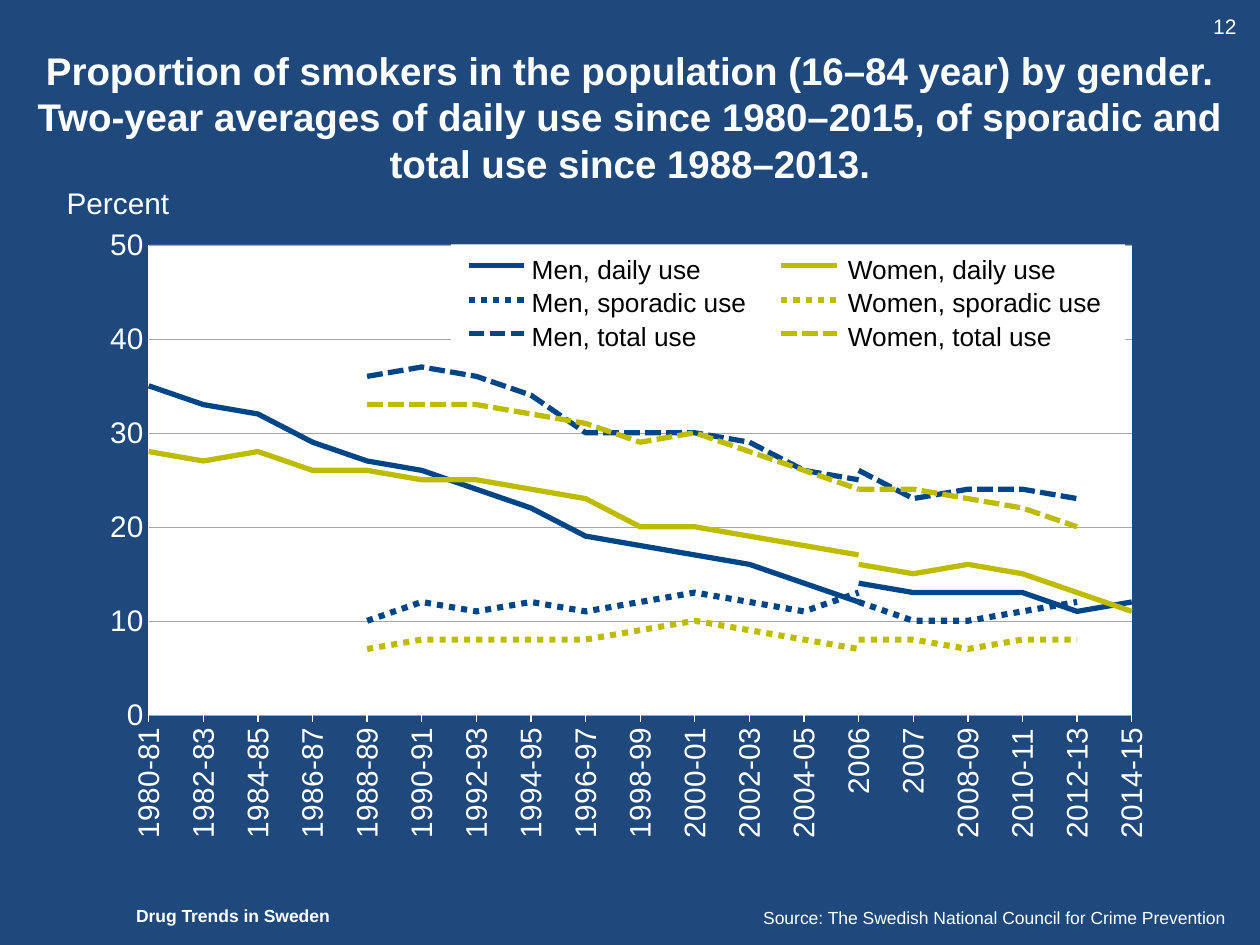
from dataclasses import dataclass

from lxml.etree import SubElement
from pptx import Presentation
from pptx.chart.data import CategoryChartData as ChartData
from pptx.dml.color import RGBColor as Color
from pptx.enum.chart import XL_CHART_TYPE as ChartType, XL_TICK_MARK as TickMark
from pptx.enum.dml import MSO_LINE_DASH_STYLE as Dash
from pptx.enum.shapes import MSO_CONNECTOR as Connector, MSO_SHAPE as Shape
from pptx.enum.text import MSO_ANCHOR as Anchor, MSO_AUTO_SIZE as AutoSize, PP_ALIGN as Align
from pptx.oxml import parse_xml
from pptx.oxml.ns import nsdecls, qn
from pptx.util import Inches, Pt


@dataclass(frozen=True)
class Theme:
    """Colours, font and type sizes of the slide."""
    back: Color = Color.from_string("1F497D")
    light: Color = Color.from_string("FFFFFF")
    dark: Color = Color.from_string("000000")
    grid: Color = Color.from_string("A6A6A6")
    men: Color = Color.from_string("004687")
    women: Color = Color.from_string("BEBC00")
    font: str = "Arial"
    title: float = 22
    label: float = 17
    key: float = 15
    number: float = 12
    small: float = 10


THEME = Theme()
WIDTH, HEIGHT = Inches(10), Inches(7.5)
STYLES = {"daily": (3, None), "sporadic": (3.5, Dash.ROUND_DOT), "total": (3, Dash.SQUARE_DOT)}
COLOURS = {"Men": THEME.men, "Women": THEME.women}
PERIODS = ["1980-81", "1982-83", "1984-85", "1986-87", "1988-89", "1990-91", "1992-93",
           "1994-95", "1996-97", "1998-99", "2000-01", "2002-03", "2004-05", "2006", "2007",
           "2008-09", "2010-11", "2012-13", "2014-15"]
BREAK = PERIODS.index("2006")
SMOKERS = [
    ("Men", "daily", [35, 33, 32, 29, 27, 26, 24, 22, 19, 18, 17, 16, 14, 12],
     [14, 13, 13, 13, 11, 12]),
    ("Men", "total", [36, 37, 36, 34, 30, 30, 30, 29, 26, 25], [26, 23, 24, 24, 23]),
    ("Men", "sporadic", [10, 12, 11, 12, 11, 12, 13, 12, 11, 13], [12, 10, 10, 11, 12]),
    ("Women", "daily", [28, 27, 28, 26, 26, 25, 25, 24, 23, 20, 20, 19, 18, 17],
     [16, 15, 16, 15, 13, 11]),
    ("Women", "total", [33, 33, 33, 32, 31, 29, 30, 28, 26, 24], [24, 24, 23, 22, 20]),
    ("Women", "sporadic", [7, 8, 8, 8, 8, 9, 10, 9, 8, 7], [8, 8, 7, 8, 8]),
]


def place(left, top, width, height):
    """Turn percentages of the slide into lengths."""
    return [round(share * side / 100) for share, side in
            zip((left, top, width, height), (WIDTH, HEIGHT, WIDTH, HEIGHT))]


def set_font(font, size, color=THEME.light, bold=False):
    """Apply the theme font."""
    font.name, font.size, font.bold = THEME.font, Pt(size), bold
    font.color.rgb = color


def set_line(line, color, width, dash=None):
    """Colour a line and set its width and dash."""
    line.color.rgb, line.width = color, Pt(width)
    if dash:
        line.dash_style = dash


def add_label(page, area, text, size, bold=False, align=Align.LEFT, wrap=True):
    """Add one line of light text and return its frame."""
    frame = page.shapes.add_textbox(*place(*area)).text_frame
    frame.word_wrap = wrap
    frame.auto_size = AutoSize.SHAPE_TO_FIT_TEXT
    para = frame.paragraphs[0]
    para.text, para.alignment = text, align
    set_font(para.font, size, bold=bold)
    return frame


def add_title(page, text):
    """Move and fill the title placeholder."""
    title = page.shapes.title
    title.left, title.top, title.width, title.height = place(0, 4, 100, 16.67)
    title.text_frame.vertical_anchor = Anchor.MIDDLE
    title.text_frame.word_wrap = True
    para = title.text_frame.paragraphs[0]
    para.text, para.alignment = text, Align.CENTER
    set_font(para.font, THEME.title, bold=True)


def pad(start, values):
    """Fill a run of values with gaps to cover all periods."""
    return [None] * start + values + [None] * (len(PERIODS) - start - len(values))


def style_axes(chart):
    """Format the period and percent axes."""
    periods, percent = chart.category_axis, chart.value_axis
    for axis, width in ((periods, 0.75), (percent, 0.25)):
        set_font(axis.tick_labels.font, THEME.label)
        set_line(axis.format.line, THEME.light, width)
        axis.minor_tick_mark = TickMark.NONE
    periods.major_tick_mark = TickMark.OUTSIDE
    percent.major_tick_mark = TickMark.NONE
    percent.minimum_scale, percent.maximum_scale, percent.major_unit = 0, 50, 10
    percent.tick_labels.number_format = "###0"
    percent.tick_labels.number_format_is_linked = False
    set_line(percent.major_gridlines.format.line, THEME.grid, 0.25)
    turned = periods._element.find(f"{qn('c:txPr')}/{qn('a:bodyPr')}")
    turned.set("rot", "-5400000")
    turned.set("vert", "horz")
    for old in percent._element.findall(qn("c:crossBetween")):
        percent._element.remove(old)
    crossing = parse_xml(f"<c:crossBetween {nsdecls('c')} val='midCat'/>")
    percent._element.xpath("c:crossAx | c:crosses")[-1].addnext(crossing)


def style_plot(chart, **layout):
    """Fix the inner plot area and fill it."""
    area = chart._chartSpace.find(f"{qn('c:chart')}/{qn('c:plotArea')}")
    for old in area.findall(qn("c:layout")):
        area.remove(old)
    frame = parse_xml(f"<c:layout {nsdecls('c')}><c:manualLayout/></c:layout>")
    settings = {"layoutTarget": "inner", "xMode": "edge", "yMode": "edge", **layout}
    for name, value in settings.items():
        SubElement(frame[0], qn(f"c:{name}")).set("val", str(value))
    area.insert(0, frame)
    area.append(parse_xml(
        f"<c:spPr {nsdecls('c', 'a')}><a:solidFill><a:srgbClr val='{THEME.light}'/>"
        "</a:solidFill><a:ln><a:noFill/></a:ln></c:spPr>"))


def add_smoker_chart(page):
    """Add the line chart, each measure split at the break in 2006."""
    data = ChartData()
    data.categories = PERIODS
    looks = []
    for gender, use, before, after in SMOKERS:
        for era, start, values in (("until", BREAK + 1 - len(before), before),
                                   ("from", BREAK, after)):
            data.add_series(f"{gender}, {use} use {era} 2006", pad(start, values))
            looks.append((COLOURS[gender], *STYLES[use]))
    area = place(6.6, 20.93, 86.7, 71.07)
    chart = page.shapes.add_chart(ChartType.LINE, *area, data).chart
    chart.has_legend = chart.has_title = False
    set_font(chart.font, THEME.label)
    for series, look in zip(chart.plots[0].series, looks):
        series.smooth = False
        set_line(series.format.line, *look)
    style_axes(chart)
    style_plot(chart, x=0.06, y=0.07, w=0.9, h=0.7)


def add_key(page):
    """Add the two-column key with its line samples."""
    box = page.shapes.add_shape(Shape.RECTANGLE, *place(35.8, 25.87, 53.5, 11.07))
    box.shadow.inherit = False
    box.fill.solid()
    box.fill.fore_color.rgb = THEME.light
    box.line.fill.background()
    frame = box.text_frame
    frame.vertical_anchor = Anchor.TOP
    frame.margin_left, frame.margin_right = Inches(0.64), 0
    for row, (use, style) in enumerate(STYLES.items()):
        para = frame.add_paragraph() if row else frame.paragraphs[0]
        para.text = "\t".join(f"{gender}, {use} use" for gender in COLOURS)
        para.alignment, para.line_spacing = Align.LEFT, 1.07
        tabs = SubElement(para._p.get_or_add_pPr(), qn("a:tabLst"))
        SubElement(tabs, qn("a:tab"), pos=str(Inches(2.51)), algn="l")
        set_font(para.font, THEME.key, THEME.dark)
        for column, color in enumerate(COLOURS.values()):
            left, top, width, _ = place(37.2 + 24.8 * column, 28.13 + 3.6 * row, 4.4, 0)
            sample = page.shapes.add_connector(Connector.STRAIGHT, left, top, left + width, top)
            set_line(sample.line, color, *style)
            SubElement(sample._element.spPr, qn("a:effectLst"))


def main():
    """Build and save the slide."""
    deck = Presentation()
    deck.slide_width, deck.slide_height = WIDTH, HEIGHT
    page = deck.slides.add_slide(deck.slide_layouts[5])
    page.background.fill.solid()
    page.background.fill.fore_color.rgb = THEME.back
    footer = add_label(page, (7.6, 95.07, 20, 3.6), "Drug Trends in Sweden",
                       THEME.small, bold=True, wrap=False)
    footer.margin_left = Inches(0.32)
    add_title(page, "Proportion of smokers in the population (16–84 year) by gender. "
                    "Two-year averages of daily use since 1980–2015, "
                    "of sporadic and total use since 1988–2013.")
    add_smoker_chart(page)
    add_label(page, (4.3, 18.8, 10.3, 5.2), "Percent", THEME.label,
              wrap=False).vertical_anchor = Anchor.MIDDLE
    add_label(page, (52.4, 95.33, 45.8, 3.6),
              "Source: The Swedish National Council for Crime Prevention",
              THEME.small, align=Align.RIGHT)
    add_label(page, (95.3, 0.8, 4.7, 4), "12", THEME.number)
    add_key(page)
    deck.save("out.pptx")


if __name__ == "__main__":
    main()
